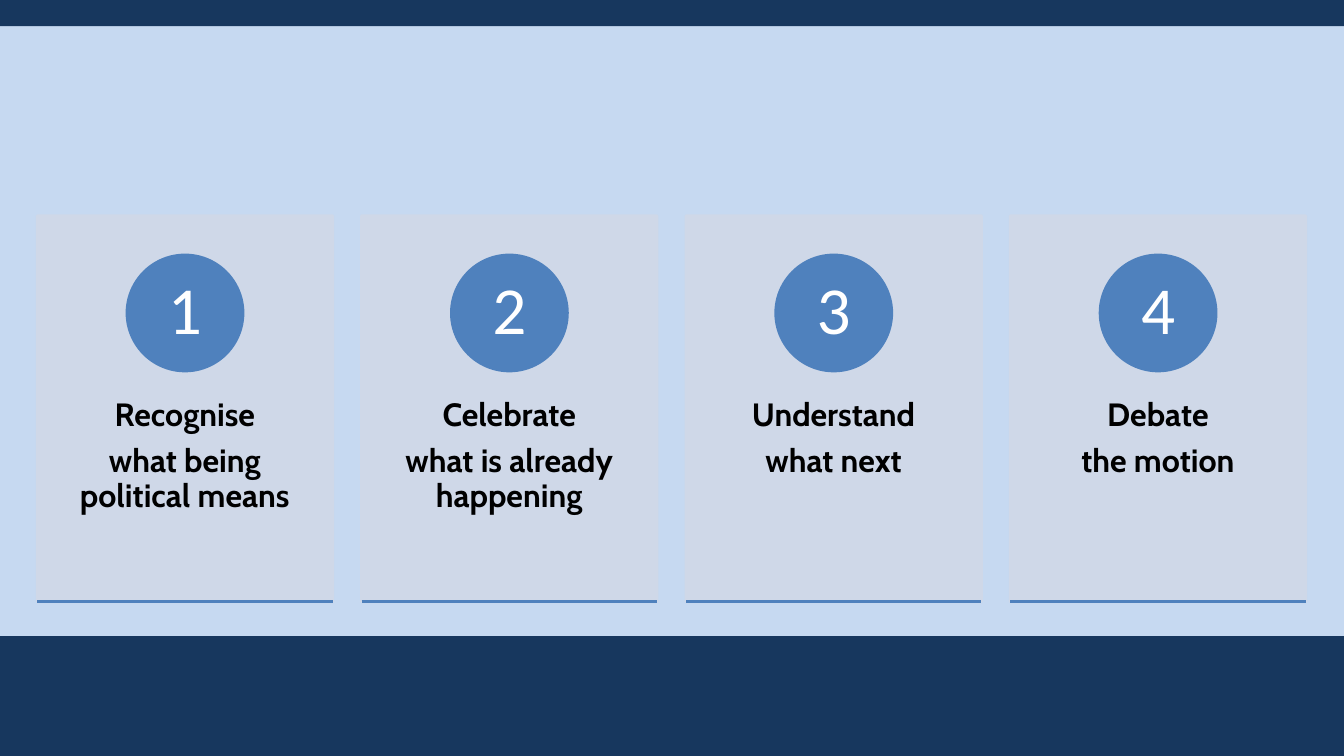
from lxml import etree
from pptx import Presentation
from pptx.dml.color import RGBColor
from pptx.enum.shapes import MSO_CONNECTOR, MSO_SHAPE
from pptx.enum.text import MSO_ANCHOR, PP_ALIGN
from pptx.oxml.ns import qn
from pptx.util import Inches, Pt

RECT, OVAL = MSO_SHAPE.RECTANGLE, MSO_SHAPE.OVAL
STRAIGHT = MSO_CONNECTOR.STRAIGHT
CENTER, MIDDLE = PP_ALIGN.CENTER, MSO_ANCHOR.MIDDLE

SKY = RGBColor(0xC6, 0xD9, 0xF1)
NAVY = RGBColor(0x17, 0x37, 0x5E)
PALE = RGBColor(0xD0, 0xD8, 0xE8)
BLUE = RGBColor(0x4F, 0x81, 0xBD)
BLACK = RGBColor(0, 0, 0)
WHITE = RGBColor(0xFF, 0xFF, 0xFF)

WIDTH, HEIGHT = 13.33, 7.5
LEFT, TOP, PITCH = 0.37, 2.14, 3.217
CARD_W, CARD_H = 2.93, 3.83
DISC = 1.15

STEPS = [
    ("Recognise", "what being political means"),
    ("Celebrate", "what is already happening"),
    ("Understand", "what next"),
    ("Debate", "the motion"),
]


def add_block(kind, x, y, w, h, color):
    block = slide.shapes.add_shape(kind, Inches(x), Inches(y), Inches(w), Inches(h))
    block.shadow.inherit = False
    block.fill.solid()
    block.fill.fore_color.rgb = color
    block.line.fill.background()
    return block


def set_text(frame, lines, font, size, color, bold, inset_x, inset_y):
    frame.word_wrap = True
    frame.margin_left = frame.margin_right = Inches(inset_x)
    frame.margin_top = frame.margin_bottom = Inches(inset_y)
    for i, line in enumerate(lines):
        para = frame.add_paragraph() if i else frame.paragraphs[0]
        para.text = line
        para.alignment = CENTER
        para.line_spacing = 0.9
        para.space_after = Pt(8)
        para.font.name = font
        para.font.size = Pt(size)
        para.font.bold = bold
        para.font.color.rgb = color


prs = Presentation()
prs.slide_width, prs.slide_height = Inches(WIDTH), Inches(HEIGHT)
slide = prs.slides.add_slide(prs.slide_layouts[6])
slide.background.fill.solid()
slide.background.fill.fore_color.rgb = SKY

# Bands
add_block(RECT, 0, 6.31, WIDTH, 1.19, NAVY)
add_block(RECT, 0, 0, WIDTH, 0.26, NAVY)

# Numbered cards
for i, lines in enumerate(STEPS):
    x = LEFT + i * PITCH

    card = add_block(RECT, x, TOP, CARD_W, CARD_H, PALE)
    card.line.color.rgb = PALE
    card.line.width = Pt(2)
    for tint in card._element.spPr.iter(qn("a:srgbClr")):
        etree.SubElement(tint, qn("a:alpha"), val="90000")

    label = slide.shapes.add_textbox(
        Inches(x), Inches(3.6), Inches(CARD_W), Inches(2.3))
    set_text(label.text_frame, lines, "Cabin", 23, BLACK, True, 0.23, 0.36)

    disc = add_block(OVAL, x + (CARD_W - DISC) / 2, 2.53, DISC, DISC, BLUE)
    disc.line.color.rgb = BLUE
    disc.line.width = Pt(2)
    disc.text_frame.vertical_anchor = MIDDLE
    set_text(disc.text_frame, [str(i + 1)], "Calibri", 48, WHITE, False, 0.09, 0.01)

    base = TOP + CARD_H
    rule = slide.shapes.add_connector(
        STRAIGHT, Inches(x), Inches(base), Inches(x + CARD_W), Inches(base))
    rule.line.color.rgb = BLUE
    rule.line.width = Pt(2)
    etree.SubElement(rule._element.spPr, qn("a:effectLst"))

prs.save("out.pptx")
